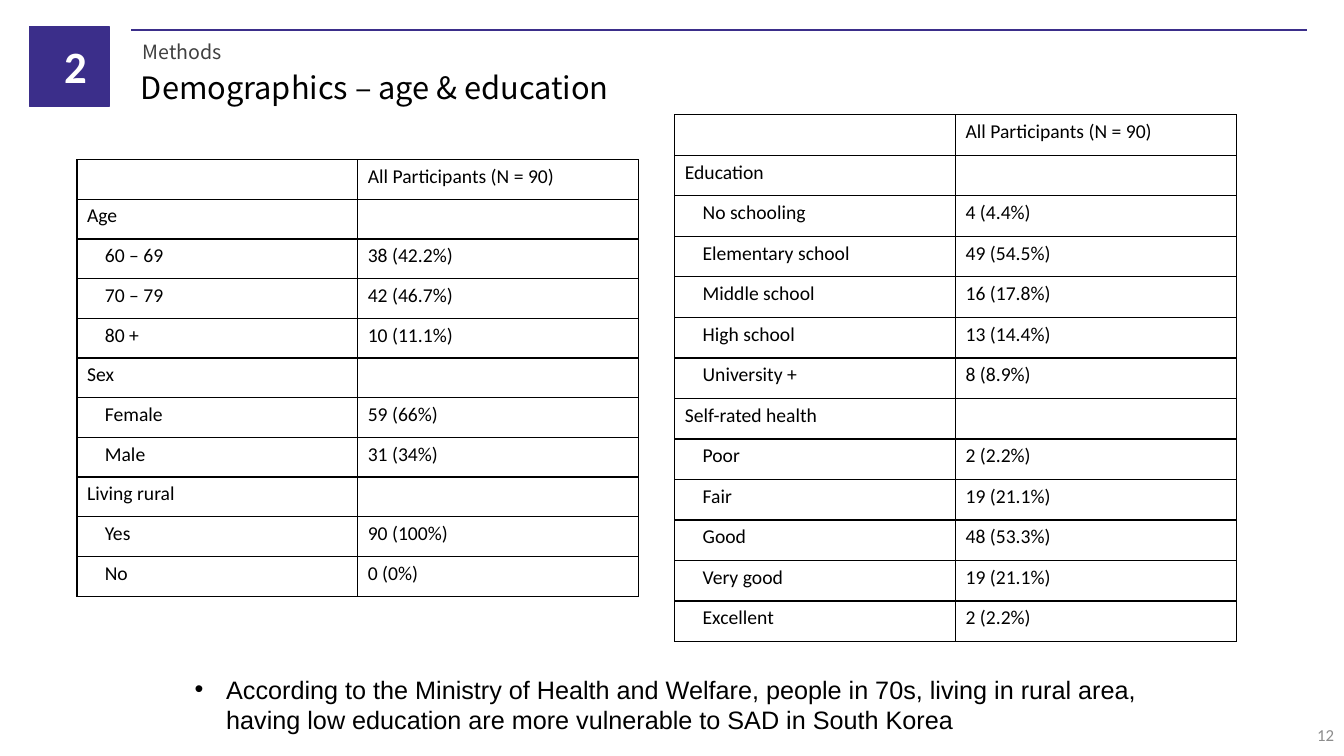
from dataclasses import dataclass

from lxml import etree
from pptx import Presentation
from pptx.dml.color import RGBColor
from pptx.enum.shapes import MSO_CONNECTOR, MSO_SHAPE
from pptx.enum.text import MSO_ANCHOR, MSO_AUTO_SIZE, PP_ALIGN
from pptx.oxml.ns import qn
from pptx.util import Pt

LINE = MSO_CONNECTOR.STRAIGHT
RECT = MSO_SHAPE.RECTANGLE
TOP, MIDDLE = MSO_ANCHOR.TOP, MSO_ANCHOR.MIDDLE
GROW = MSO_AUTO_SIZE.SHAPE_TO_FIT_TEXT
LEFT, CENTER, RIGHT = PP_ALIGN.LEFT, PP_ALIGN.CENTER, PP_ALIGN.RIGHT


@dataclass(frozen=True)
class Theme:
    """Colours, fonts and type sizes of the slide."""
    accent: str = "3B2E8A"
    white: str = "FFFFFF"
    black: str = "000000"
    dark: str = "404040"
    grey: str = "8C8C8C"
    body: str = "Calibri"
    head: str = "Noto Sans CJK KR"
    note: str = "Arial"
    badge: int = 32
    title: int = 22
    point: int = 18
    small: int = 14
    page: int = 12


class Deck:
    """Draw each kind of element on the current slide in one style."""

    def __init__(self, theme, slide):
        self.theme = theme
        self.slide = slide

    def rule(self, x1, x2, y):
        line = self.slide.shapes.add_connector(LINE, Pt(x1), Pt(y), Pt(x2), Pt(y))
        line.line.color.rgb = RGBColor.from_string(self.theme.accent)
        line.line.width = Pt(1.5)
        etree.SubElement(line._element.spPr, qn("a:effectLst"))

    def square(self, x, y, side):
        shape = self.slide.shapes.add_shape(RECT, Pt(x), Pt(y), Pt(side), Pt(side))
        shape.shadow.inherit = False
        color = RGBColor.from_string(self.theme.accent)
        shape.fill.solid()
        shape.fill.fore_color.rgb = color
        shape.line.color.rgb = color
        shape.line.width = Pt(1)

    def run(self, para, text, size, font, color, bold=False):
        run = para.add_run()
        run.text = text
        run.font.size = Pt(size)
        run.font.name = font
        run.font.bold = bold
        run.font.color.rgb = RGBColor.from_string(color)

    def text(self, box, lines, size, font, color, bold=False, align=LEFT, anchor=TOP):
        shape = self.slide.shapes.add_textbox(*map(Pt, box))
        frame = shape.text_frame
        frame.word_wrap = True
        frame.vertical_anchor = anchor
        if anchor == TOP:
            frame.auto_size = GROW
        para = frame.paragraphs[0]
        para.alignment = align
        for i, line in enumerate(lines):
            if i:
                para.add_line_break()
            self.run(para, line, size, font, color, bold)
        return para

    def bullet(self, para, indent):
        props = para._p.get_or_add_pPr()
        props.set("marL", str(Pt(indent)))
        props.set("indent", str(-Pt(indent)))
        etree.SubElement(props, qn("a:buFont"), typeface=self.theme.note)
        etree.SubElement(props, qn("a:buChar"), char="•")

    def border(self, cell):
        props = cell._tc.get_or_add_tcPr()
        for side in ("a:lnL", "a:lnR", "a:lnT", "a:lnB"):
            edge = etree.SubElement(props, qn(side), w=str(Pt(1)))
            fill = etree.SubElement(edge, qn("a:solidFill"))
            etree.SubElement(fill, qn("a:srgbClr"), val=self.theme.black)

    def cell(self, cell, text, inset):
        style = self.theme
        cell.margin_left = Pt(inset)
        self.border(cell)
        cell.fill.background()
        para = cell.text_frame.paragraphs[0]
        if text:
            self.run(para, text, style.small, style.body, style.black)
        else:
            etree.SubElement(para._p, qn("a:endParaRPr"), sz=str(style.small * 100))

    def table(self, x, y, width, height, groups):
        rows = [("", "All Participants (N = 90)", 7.2)]
        for name, items in groups.items():
            rows.append((name, "", 7.2))
            rows += [(label, value, 19.9) for label, value in items]
        frame = self.slide.shapes.add_table(
            len(rows), 2, Pt(x), Pt(y), Pt(width), Pt(height))
        table = frame.table
        table.first_row = table.horz_banding = False
        for i, (label, value, inset) in enumerate(rows):
            self.cell(table.cell(i, 0), label, inset)
            self.cell(table.cell(i, 1), value, 7.2)


PEOPLE = {
    "Age": [("60 – 69", "38 (42.2%)"), ("70 – 79", "42 (46.7%)"), ("80 +", "10 (11.1%)")],
    "Sex": [("Female", "59 (66%)"), ("Male", "31 (34%)")],
    "Living rural": [("Yes", "90 (100%)"), ("No", "0 (0%)")],
}
STATUS = {
    "Education": [
        ("No schooling", "4 (4.4%)"), ("Elementary school", "49 (54.5%)"),
        ("Middle school", "16 (17.8%)"), ("High school", "13 (14.4%)"),
        ("University +", "8 (8.9%)")],
    "Self-rated health": [
        ("Poor", "2 (2.2%)"), ("Fair", "19 (21.1%)"), ("Good", "48 (53.3%)"),
        ("Very good", "19 (21.1%)"), ("Excellent", "2 (2.2%)")],
}
NOTE = [
    "According to the Ministry of Health and Welfare, people in 70s, living in rural area, ",
    "having low education are more vulnerable to SAD in South Korea",
]


def main():
    show = Presentation()
    show.slide_width, show.slide_height = Pt(960), Pt(540)
    style = Theme()
    deck = Deck(style, show.slides.add_slide(show.slide_layouts[6]))

    deck.rule(93.6, 933.6, 21.5)
    deck.square(21, 19, 57)
    deck.text((38.5, 24, 31, 46), ["2"], style.badge, style.body, style.white,
              bold=True, align=CENTER)
    deck.text((843, 512.5, 117, 25), ["12"], style.page, style.body, style.grey,
              align=RIGHT, anchor=MIDDLE)
    deck.text((95, 25, 450, 24.5), ["Methods"], style.small, style.head, style.dark)
    deck.text((93.6, 45.5, 479, 34), ["Demographics – age & education"],
              style.title, style.head, style.black)
    deck.table(55, 114, 401, 312, PEOPLE)
    deck.table(482, 82, 401, 376.5, STATUS)
    note = deck.text((132, 478, 820, 56), NOTE, style.point, style.note, style.black)
    deck.bullet(note, 22.5)

    show.save("out.pptx")


if __name__ == "__main__":
    main()
